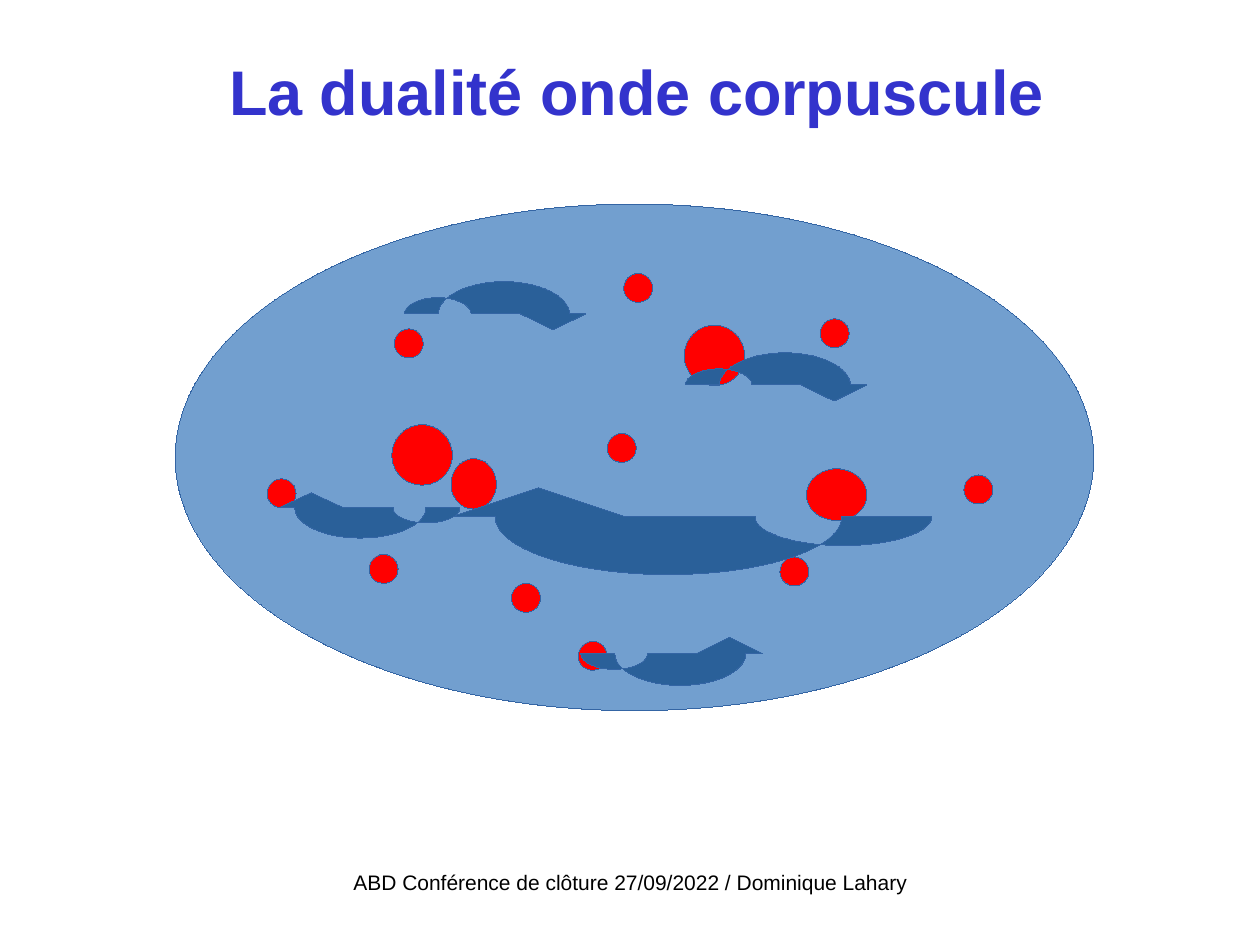
from dataclasses import dataclass

from lxml import etree
from pptx import Presentation
from pptx.dml.color import RGBColor
from pptx.enum.shapes import MSO_SHAPE
from pptx.enum.text import MSO_ANCHOR, MSO_AUTO_SIZE, PP_ALIGN
from pptx.oxml.ns import qn
from pptx.util import Inches, Pt

OVAL = MSO_SHAPE.OVAL
MIDDLE, TOP = MSO_ANCHOR.MIDDLE, MSO_ANCHOR.TOP
CENTER = PP_ALIGN.CENTER
NO_FIT = MSO_AUTO_SIZE.NONE

# Grid of square cells, 100 columns by 75 rows
COLS, ROWS = 100, 75
CELL = Inches(0.1)
BEND = 0.55  # handle length of a quarter ellipse


@dataclass(frozen=True)
class Theme:
    font: str = "Arial"
    title: RGBColor = RGBColor(0x33, 0x33, 0xCC)
    text: RGBColor = RGBColor(0, 0, 0)
    field: RGBColor = RGBColor(0x72, 0x9F, 0xCF)
    dot: RGBColor = RGBColor(0xFF, 0, 0)
    wave: RGBColor = RGBColor(0x2A, 0x60, 0x99)
    edge: RGBColor = RGBColor(0x34, 0x65, 0xA4)
    big: Pt = Pt(36)
    small: Pt = Pt(12)


THEME = Theme()

FIELD = (13.9, 16.2, 72.9, 40.2)

# Particles: left, top, width, height
LARGE = [(31.1, 33.7, 4.8, 4.8), (54.3, 25.8, 4.8, 4.8),
         (64, 37.2, 4.8, 4.1), (35.8, 36.4, 3.6, 4)]
# Small particles share one size: left, top
SIZE = 2.3
SMALL = [(45.9, 50.9), (29.3, 44), (21.2, 38), (48.2, 34.4),
         (40.6, 46.3), (49.5, 21.7), (31.3, 26.1), (65.1, 25.3),
         (61.9, 44.2), (76.5, 37.7)]

# Waves: start column, base row, signed span, signed height
WAVES = [(48.8, 51.85, 10.4, 2.55), (34.8, 24.9, 10.4, -2.55),
         (66.8, 41, -27.5, 4.6), (57.1, 30.55, 10.4, -2.55),
         (33.8, 40.3, -10.4, 2.4)]


def grid(*cells):
    return [round(c * CELL) for c in cells]


def paint(shape, color):
    shape.shadow.inherit = False
    shape.fill.solid()
    shape.fill.fore_color.rgb = color
    shape.line.color.rgb = THEME.edge
    shape.get_or_add_ln().set("w", "0")  # hairline


def add_oval(slide, box, color):
    paint(slide.shapes.add_shape(OVAL, *grid(*box)), color)


def arc(start, end, rise):
    """Handles and ends of two quarter curves from start to end."""
    mid, half = (start + end) / 2, (end - start) / 2
    return [(start, rise * BEND), (mid - half * BEND, rise), (mid, rise),
            (mid + half * BEND, rise), (end, rise * BEND), (end, 0)]


def bend(track, first):
    """Turn three lines, from the given one on, into one curve."""
    lines = track.findall(qn("a:lnTo"))[first:first + 3]
    curve = etree.Element(qn("a:cubicBezTo"))
    lines[0].addprevious(curve)
    for line in lines:
        curve.append(line[0])
        track.remove(line)


def set_frame(shape, track, box):
    """Fit the frame to the box and keep the outline in place."""
    left, top, width, height = box
    for point in track.iter(qn("a:pt")):
        point.set("x", str(int(point.get("x")) + shape.left - left))
        point.set("y", str(int(point.get("y")) + shape.top - top))
    track.set("w", str(width))
    track.set("h", str(height))
    shape.left, shape.top, shape.width, shape.height = box


def add_wave(slide, col, row, span, height):
    # Unit outline: tail arc, main arc, then the arrow head
    unit = [(0.25, 0), *arc(0.25, -0.26, 0.5), (0, 0), *arc(0, 1, 1),
            (1.125, 0), (0.875, -0.5), (0.625, 0)]
    points = [grid(col + x * span, row + y * height) for x, y in unit]
    pen = slide.shapes.build_freeform(*points[0])
    pen.add_line_segments(points[1:], close=True)
    shape = pen.convert_to_shape()
    track = next(shape.element.iter(qn("a:path")))
    for first in (10, 7, 3, 0):
        bend(track, first)
    # The frame holds the whole ellipse of the main arc
    wide, high = abs(span), abs(height)
    left = min(col, col + span)
    set_frame(shape, track, grid(left, row - high, wide, 2 * high))
    paint(shape, THEME.wave)


def set_text(shape, text, size, color, bold, anchor):
    frame = shape.text_frame
    frame.text = text
    frame.word_wrap = True
    frame.auto_size = NO_FIT
    frame.vertical_anchor = anchor
    para = frame.paragraphs[0]
    para.alignment = CENTER
    font = para.font
    font.name, font.size, font.bold = THEME.font, size, bold
    font.color.rgb = color


def add_title(slide, text):
    title = slide.shapes.title
    title.left, title.top, title.width, title.height = grid(4.3, 0, 92.5, 14.4)
    set_text(title, text, THEME.big, THEME.title, True, MIDDLE)


def add_foot(slide, text):
    box = slide.shapes.add_textbox(*grid(3.4, 68.5, 93.3, 5))
    set_text(box, text, THEME.small, THEME.text, False, TOP)


def main():
    deck = Presentation()
    deck.slide_width, deck.slide_height = grid(COLS, ROWS)
    slide = deck.slides.add_slide(deck.slide_layouts[5])

    add_foot(slide, "ABD Conférence de clôture 27/09/2022 / Dominique Lahary")
    add_title(slide, "La dualité onde corpuscule")

    # Field, particles, then waves on top
    add_oval(slide, FIELD, THEME.field)
    for box in LARGE + [(x, y, SIZE, SIZE) for x, y in SMALL]:
        add_oval(slide, box, THEME.dot)
    for wave in WAVES:
        add_wave(slide, *wave)

    deck.save("out.pptx")


if __name__ == "__main__":
    main()
